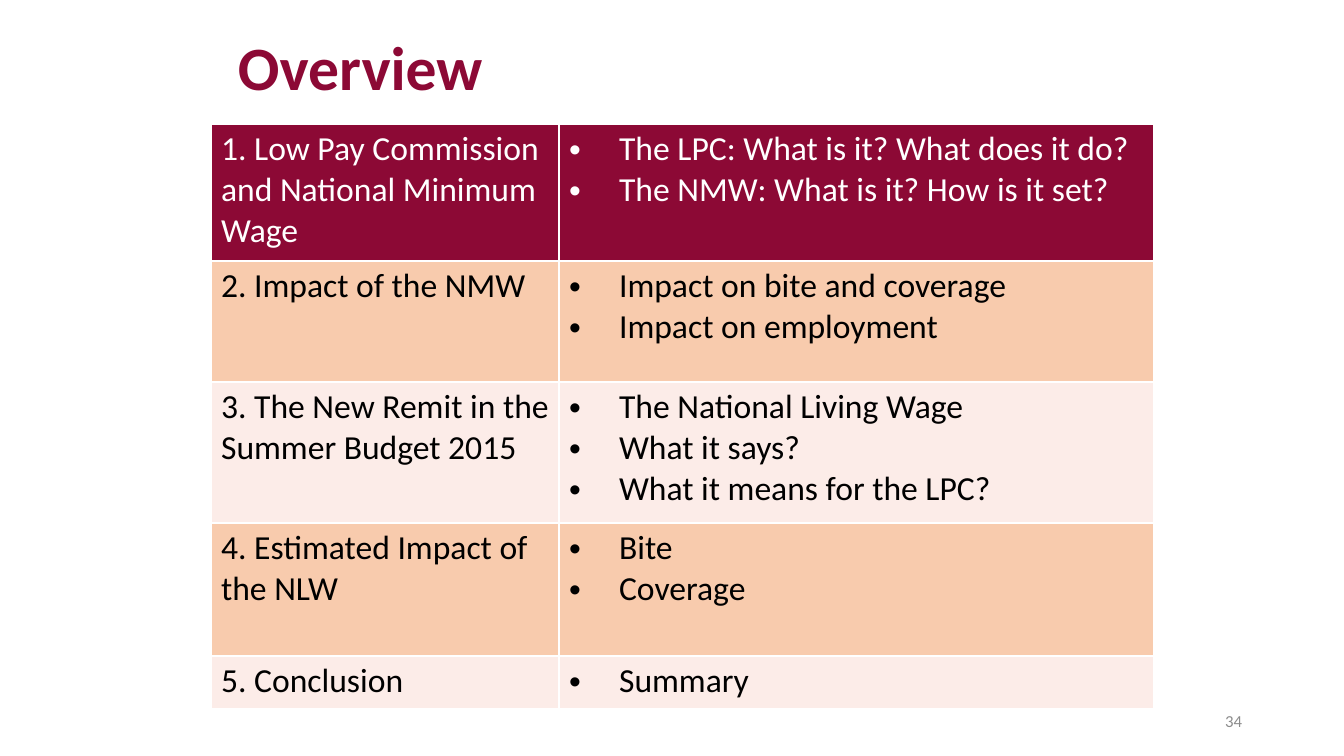
from lxml import etree
from pptx import Presentation
from pptx.dml.color import RGBColor
from pptx.enum.text import MSO_ANCHOR, PP_ALIGN
from pptx.oxml.ns import qn
from pptx.util import Pt

LEFT, RIGHT = PP_ALIGN.LEFT, PP_ALIGN.RIGHT
MIDDLE = MSO_ANCHOR.MIDDLE
SLIDE_WIDTH, SLIDE_HEIGHT = 1344, 756
EMU_PER_PX = 12192000 / SLIDE_WIDTH
FONT = "Calibri"
MAROON, PEACH, BLUSH = "8C0935", "F8CBAD", "FCECE8"
WHITE, BLACK, GREY = "FFFFFF", "000000", "8C8C8C"

SECTIONS = [
    (137, "1. Low Pay Commission and National Minimum Wage",
     ["The LPC: What is it? What does it do?", "The NMW: What is it? How is it set?"]),
    (121, "2. Impact of the NMW",
     ["Impact on bite and coverage", "Impact on employment"]),
    (141, "3. The New Remit in the Summer Budget 2015",
     ["The National Living Wage", "What it says?", "What it means for the LPC?"]),
    (133, "4. Estimated Impact of the NLW", ["Bite", "Coverage"]),
    (53, "5. Conclusion", ["Summary"]),
]


def px(length):
    return round(length * EMU_PER_PX)


def color(value):
    return RGBColor.from_string(value)


class OverviewSlide:
    def __init__(self, presentation):
        self.slide = presentation.slides.add_slide(presentation.slide_layouts[6])

    def style(self, paragraph, size, ink, bold=False):
        for run in paragraph.runs:
            run.font.name = FONT
            run.font.size = Pt(size)
            run.font.bold = bold
            run.font.color.rgb = color(ink)

    def label(self, text, left, top, width, height, size, ink, bold=False, align=LEFT):
        frame = self.slide.shapes.add_textbox(
            px(left), px(top), px(width), px(height)).text_frame
        frame.word_wrap = True
        frame.vertical_anchor = MIDDLE
        frame.text = text
        paragraph = frame.paragraphs[0]
        paragraph.alignment = align
        paragraph.line_spacing = 0.9 if bold else 1.0
        self.style(paragraph, size, ink, bold)

    def bullet(self, paragraph):
        properties = paragraph._p.get_or_add_pPr()
        properties.set("marL", str(px(50)))
        properties.set("indent", str(-px(50)))
        etree.SubElement(properties, qn("a:buFont"), typeface="Arial")
        etree.SubElement(properties, qn("a:buChar"), char="•")

    def borders(self, cell):
        properties = cell._tc.get_or_add_tcPr()
        for side in ("lnL", "lnR", "lnT", "lnB"):
            line = etree.SubElement(properties, qn(f"a:{side}"), w=str(Pt(1)))
            paint = etree.SubElement(line, qn("a:solidFill"))
            etree.SubElement(paint, qn("a:srgbClr"), val=WHITE)

    def cell(self, cell, lines, fill, ink, bulleted):
        self.borders(cell)
        cell.fill.solid()
        cell.fill.fore_color.rgb = color(fill)
        cell.text_frame.text = "\n".join(lines)
        for paragraph in cell.text_frame.paragraphs:
            self.style(paragraph, 24, ink)
            if bulleted:
                self.bullet(paragraph)

    def agenda(self, sections, left, top, widths):
        height = sum(section[0] for section in sections)
        table = self.slide.shapes.add_table(
            len(sections), len(widths), px(left), px(top),
            px(sum(widths)), px(height)).table
        for column, width in zip(table.columns, widths):
            column.width = px(width)
        for index, (row_height, heading, topics) in enumerate(sections):
            table.rows[index].height = px(row_height)
            fill = MAROON if index == 0 else (BLUSH, PEACH)[index % 2]
            ink = WHITE if index == 0 else BLACK
            self.cell(table.cell(index, 0), [heading], fill, ink, False)
            self.cell(table.cell(index, 1), topics, fill, ink, True)


def main():
    presentation = Presentation()
    presentation.slide_width = px(SLIDE_WIDTH)
    presentation.slide_height = px(SLIDE_HEIGHT)
    overview = OverviewSlide(presentation)
    overview.label("Overview", 228, 21, 857, 100, 44, MAROON, bold=True)
    overview.agenda(SECTIONS, 211, 124, (348, 595))
    overview.label("34", 950, 701, 302, 40, 12, GREY, align=RIGHT)
    presentation.save("out.pptx")


if __name__ == "__main__":
    main()
